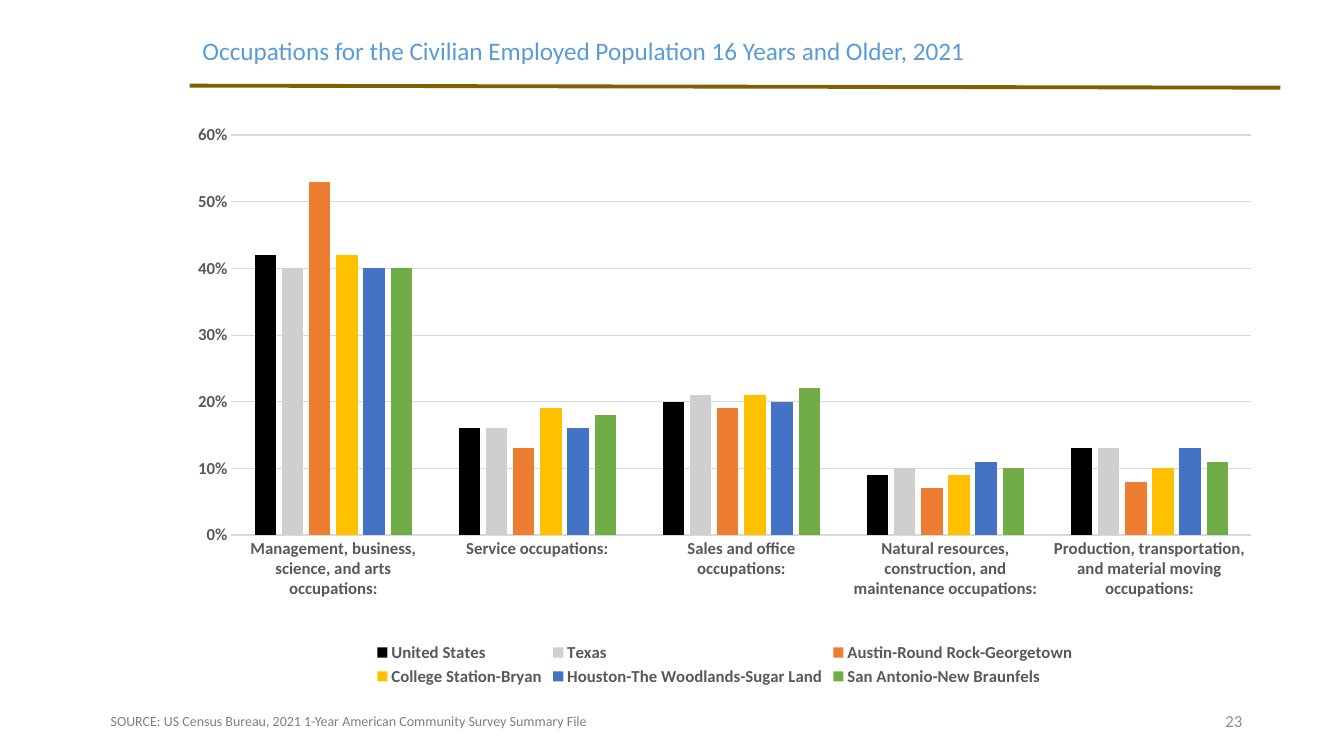
from dataclasses import dataclass

from lxml.etree import SubElement
from pptx import Presentation
from pptx.chart.chart import Chart
from pptx.chart.data import CategoryChartData
from pptx.dml.color import RGBColor
from pptx.enum.chart import XL_CHART_TYPE, XL_LEGEND_POSITION, XL_TICK_MARK
from pptx.enum.shapes import MSO_CONNECTOR
from pptx.enum.text import MSO_ANCHOR, PP_ALIGN
from pptx.oxml.ns import qn
from pptx.slide import Slide
from pptx.util import Inches, Pt

SLIDE_WIDTH = Inches(13.33)
SLIDE_HEIGHT = Inches(7.5)
COLUMN = SLIDE_WIDTH / 100
ROW = SLIDE_HEIGHT / 100

FONT = "Calibri"
BROWN = RGBColor(0x80, 0x60, 0x00)
TITLE_BLUE = RGBColor(0x5B, 0x9B, 0xD5)
NUMBER_GRAY = RGBColor(0x8C, 0x8C, 0x8C)
SOURCE_GRAY = RGBColor(0x80, 0x80, 0x80)
LABEL_GRAY = RGBColor(0x59, 0x59, 0x59)
GRID_GRAY = RGBColor(0xD9, 0xD9, 0xD9)
BLACK = RGBColor(0x00, 0x00, 0x00)
SILVER = RGBColor(0xD0, 0xCE, 0xCE)
ORANGE = RGBColor(0xED, 0x7D, 0x31)
GOLD = RGBColor(0xFF, 0xC0, 0x00)
BLUE = RGBColor(0x44, 0x72, 0xC4)
GREEN = RGBColor(0x70, 0xAD, 0x47)


@dataclass(frozen=True)
class Area:
    column: float
    row: float
    columns: float
    rows: float

    def lengths(self) -> tuple[int, int, int, int]:
        return (
            round(self.column * COLUMN),
            round(self.row * ROW),
            round(self.columns * COLUMN),
            round(self.rows * ROW),
        )


@dataclass(frozen=True)
class Label:
    text: str
    area: Area
    size: int
    color: RGBColor
    anchor: MSO_ANCHOR = MSO_ANCHOR.MIDDLE
    alignment: PP_ALIGN = PP_ALIGN.LEFT
    line_spacing: float = 1.0


@dataclass(frozen=True)
class Region:
    name: str
    color: RGBColor
    shares: tuple[float, ...]


LABELS = [
    Label("23", Area(70.67, 92.67, 22.5, 5.33), 12, NUMBER_GRAY,
          alignment=PP_ALIGN.RIGHT),
    Label("Occupations for the Civilian Employed Population 16 Years and Older, 2021",
          Area(14.33, 2, 79.3, 9.87), 18, TITLE_BLUE, line_spacing=0.9),
    Label("SOURCE: US Census Bureau, 2021 1-Year American Community Survey Summary File",
          Area(7.5, 93.6, 42.76, 3.6), 10, SOURCE_GRAY, anchor=MSO_ANCHOR.TOP),
]

RULE = Area(14.1, 11.33, 81.17, 0.27)
CHART_AREA = Area(13.13, 15.2, 81.62, 76.13)
PLOT_SHARES = {"x": 0.05, "y": 0.035, "w": 0.93, "h": 0.695}

OCCUPATIONS = [
    "Management, business, science, and arts occupations:",
    "Service occupations:",
    "Sales and office occupations:",
    "Natural resources, construction, and maintenance occupations:",
    "Production, transportation, and material moving occupations:",
]

REGIONS = [
    Region("United States", BLACK, (0.42, 0.16, 0.20, 0.09, 0.13)),
    Region("Texas", SILVER, (0.40, 0.16, 0.21, 0.10, 0.13)),
    Region("Austin-Round Rock-Georgetown", ORANGE, (0.53, 0.13, 0.19, 0.07, 0.08)),
    Region("College Station-Bryan", GOLD, (0.42, 0.19, 0.21, 0.09, 0.10)),
    Region("Houston-The Woodlands-Sugar Land", BLUE, (0.40, 0.16, 0.20, 0.11, 0.13)),
    Region("San Antonio-New Braunfels", GREEN, (0.40, 0.18, 0.22, 0.10, 0.11)),
]


def add_rule(slide: Slide) -> None:
    left, top, width, height = RULE.lengths()
    connector = slide.shapes.add_connector(
        MSO_CONNECTOR.STRAIGHT, left, top, left + width, top + height
    )
    connector.line.color.rgb = BROWN
    connector.line.width = Pt(2.75)
    SubElement(connector._element.spPr, qn("a:effectLst"))


def add_label(slide: Slide, label: Label) -> None:
    frame = slide.shapes.add_textbox(*label.area.lengths()).text_frame
    frame.word_wrap = True
    frame.vertical_anchor = label.anchor
    paragraph = frame.paragraphs[0]
    paragraph.text = label.text
    paragraph.alignment = label.alignment
    paragraph.line_spacing = label.line_spacing
    paragraph.font.name = FONT
    paragraph.font.size = Pt(label.size)
    paragraph.font.color.rgb = label.color


def place_plot(chart: Chart) -> None:
    plot_area = chart._chartSpace.chart.plotArea
    for layout in plot_area.findall(qn("c:layout")):
        plot_area.remove(layout)
    layout = SubElement(plot_area, qn("c:layout"))
    plot_area.insert(0, layout)
    manual = SubElement(layout, qn("c:manualLayout"))
    SubElement(manual, qn("c:layoutTarget")).set("val", "inner")
    for side in ("x", "y"):
        SubElement(manual, qn(f"c:{side}Mode")).set("val", "edge")
    for side, share in PLOT_SHARES.items():
        SubElement(manual, qn(f"c:{side}")).set("val", str(share))


def style_axes(chart: Chart) -> None:
    for axis in (chart.category_axis, chart.value_axis):
        axis.major_tick_mark = XL_TICK_MARK.NONE
        axis.minor_tick_mark = XL_TICK_MARK.NONE
    category_line = chart.category_axis.format.line
    grid_line = chart.value_axis.major_gridlines.format.line
    for line in (category_line, grid_line):
        line.color.rgb = GRID_GRAY
        line.width = Pt(0.75)
    value_axis = chart.value_axis
    value_axis.format.line.fill.background()
    value_axis.minimum_scale = 0
    value_axis.maximum_scale = 0.6
    value_axis.major_unit = 0.1
    value_axis.tick_labels.number_format = "0%"
    value_axis.tick_labels.number_format_is_linked = False


def add_occupation_chart(slide: Slide) -> None:
    data = CategoryChartData(number_format="0%")
    data.categories = OCCUPATIONS
    for region in REGIONS:
        data.add_series(region.name, region.shares)
    chart = slide.shapes.add_chart(
        XL_CHART_TYPE.COLUMN_CLUSTERED, *CHART_AREA.lengths(), data
    ).chart
    chart.has_title = False
    chart.font.name = FONT
    chart.font.size = Pt(12)
    chart.font.bold = True
    chart.font.color.rgb = LABEL_GRAY
    chart.has_legend = True
    chart.legend.position = XL_LEGEND_POSITION.BOTTOM
    chart.legend.include_in_layout = False
    plot = chart.plots[0]
    plot.vary_by_categories = False
    plot.gap_width = 219
    plot.overlap = -27
    for series, region in zip(plot.series, REGIONS):
        series.format.fill.solid()
        series.format.fill.fore_color.rgb = region.color
    style_axes(chart)
    place_plot(chart)


def main() -> None:
    presentation = Presentation()
    presentation.slide_width = SLIDE_WIDTH
    presentation.slide_height = SLIDE_HEIGHT
    slide = presentation.slides.add_slide(presentation.slide_layouts[6])
    add_rule(slide)
    for label in LABELS:
        add_label(slide, label)
    add_occupation_chart(slide)
    presentation.save("out.pptx")


if __name__ == "__main__":
    main()
